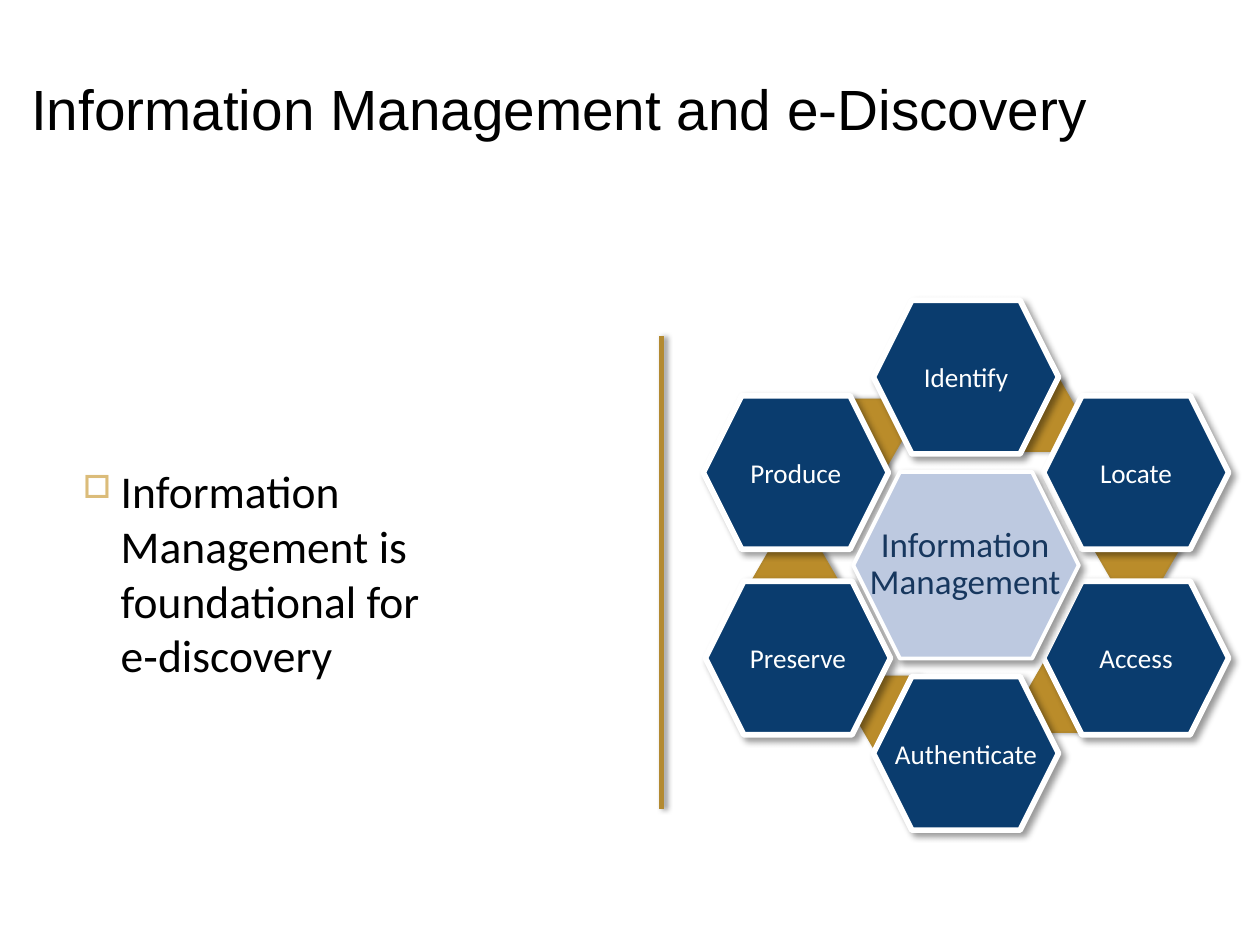
from dataclasses import dataclass

from lxml.etree import SubElement
from pptx import Presentation
from pptx.dml.color import RGBColor
from pptx.enum.shapes import MSO_CONNECTOR, MSO_SHAPE
from pptx.enum.text import MSO_ANCHOR as Anchor, PP_ALIGN as Align
from pptx.oxml.ns import qn
from pptx.util import Pt

COLORS = {
    "black": "000000", "white": "FFFFFF", "navy": "0A3C6E", "pale": "BDC9E0",
    "label": "17375E", "gold": "BA8C2A", "gold_edge": "B2882D",
    "divider": "B38A31", "bullet": "DBBC7A",
}


@dataclass(frozen=True)
class Shadow:
    blur: float
    distance: float
    angle: int


@dataclass(frozen=True)
class HexStyle:
    width: float
    height: float
    fill: str
    edge: str
    edge_width: float
    shadow: Shadow
    slant: float = 0.25


@dataclass(frozen=True)
class Step:
    label: str
    dx: float
    dy: float


SOFT = Shadow(3.1, 1.8, 0)
DEEP = Shadow(4, 3, 45)
LINK = HexStyle(49, 40.3, "gold", "gold_edge", 1, SOFT, 0.289)
STEP = HexStyle(105.8, 87.8, "navy", "white", 3.25, DEEP)
HUB = HexStyle(128.9, 106.6, "pale", "white", 2.25, DEEP)

# Ring of steps, as offsets from the hub centre
HUB_X, HUB_Y = 552, 323
SIDE_X, SIDE_Y, POLE_Y = 97.2, 53, 107.5
STEPS = [
    Step("Produce", -SIDE_X, -SIDE_Y),
    Step("Preserve", 1.2 - SIDE_X, SIDE_Y),
    Step("Locate", SIDE_X, -SIDE_Y),
    Step("Identify", 0, -POLE_Y),
    Step("Access", SIDE_X, SIDE_Y),
    Step("Authenticate", 0, POLE_Y),
]
# Centres of the gold links between neighbouring steps
LINKS = [(492.5, 248.4), (454.3, 331.9), (592.6, 237.6),
         (649.5, 313.2), (609.9, 398.2), (511.9, 406.8)]


def rgb(name: str) -> RGBColor:
    return RGBColor.from_string(COLORS[name])


def add_shadow(shape, shadow: Shadow) -> None:
    effects = SubElement(shape._element.spPr, qn("a:effectLst"))
    outer = SubElement(effects, qn("a:outerShdw"), {
        "blurRad": str(Pt(shadow.blur)), "dist": str(Pt(shadow.distance)),
        "dir": str(shadow.angle * 60000), "algn": "ctr", "rotWithShape": "0"})
    color = SubElement(outer, qn("a:srgbClr"), val=COLORS["black"])
    SubElement(color, qn("a:alpha"), val="40000")


def set_text(shape, text: str, size: float, color: str, font: str = "Calibri",
             frame_format: dict | None = None, paragraph_format: dict | None = None):
    frame = shape.text_frame
    for key, value in (frame_format or {}).items():
        setattr(frame, key, value)
    paragraph = frame.paragraphs[0]
    for key, value in (paragraph_format or {}).items():
        setattr(paragraph, key, value)
    run = paragraph.add_run()
    run.text = text
    for key, value in {"name": font, "size": Pt(size), "bold": False}.items():
        setattr(run.font, key, value)
    run.font.color.rgb = rgb(color)
    return paragraph


def add_hexagon(slide, x: float, y: float, style: HexStyle):
    hexagon = slide.shapes.add_shape(
        MSO_SHAPE.HEXAGON, Pt(x - style.width / 2), Pt(y - style.height / 2),
        Pt(style.width), Pt(style.height))
    hexagon.adjustments[0] = style.slant
    hexagon.fill.solid()
    hexagon.fill.fore_color.rgb = rgb(style.fill)
    hexagon.line.color.rgb = rgb(style.edge)
    hexagon.line.width = Pt(style.edge_width)
    add_shadow(hexagon, style.shadow)
    return hexagon


def margins(sides: float, ends: float) -> dict:
    return {"margin_left": Pt(sides), "margin_right": Pt(sides),
            "margin_top": Pt(ends), "margin_bottom": Pt(ends)}


def add_bullet(paragraph) -> None:
    properties = paragraph._p.get_or_add_pPr()
    properties.set("marL", str(Pt(21.6)))
    properties.set("indent", str(Pt(-21.6)))
    color = SubElement(properties, qn("a:buClr"))
    SubElement(color, qn("a:srgbClr"), val=COLORS["bullet"])
    SubElement(properties, qn("a:buSzPct"), val="70000")
    SubElement(properties, qn("a:buChar"), char="□")


def main() -> None:
    deck = Presentation()
    deck.slide_width, deck.slide_height = Pt(720), Pt(540)
    slide = deck.slides.add_slide(deck.slide_layouts[5])

    # Title
    title = slide.shapes.title
    for key, value in {"left": 12, "top": 16.6, "width": 648, "height": 67.7}.items():
        setattr(title, key, Pt(value))
    set_text(title, "Information Management and e-Discovery", 32.4, "black", "Arial",
             {"vertical_anchor": Anchor.BOTTOM, "word_wrap": True, **margins(5.8, 2.9)},
             {"alignment": Align.LEFT, "line_spacing": 0.9})

    # Ring of links and steps
    for x, y in LINKS:
        add_hexagon(slide, x, y, LINK)
    for step in STEPS:
        hexagon = add_hexagon(slide, HUB_X + step.dx, HUB_Y + step.dy, STEP)
        set_text(hexagon, step.label, 15.5, "white",
                 frame_format={"vertical_anchor": Anchor.MIDDLE, "word_wrap": False,
                               **margins(0, 0)},
                 paragraph_format={"alignment": Align.CENTER})

    # Hub
    add_hexagon(slide, HUB_X, HUB_Y, HUB)
    hub_label = slide.shapes.add_textbox(Pt(489.6), Pt(301), Pt(123.8), Pt(43.9))
    set_text(hub_label, "Information Management", 20, "label",
             frame_format={"word_wrap": True, **margins(0, 0)},
             paragraph_format={"alignment": Align.CENTER, "line_spacing": 0.9})

    # Divider
    divider = slide.shapes.add_connector(
        MSO_CONNECTOR.STRAIGHT, Pt(378), Pt(192.2), Pt(378), Pt(462.2))
    divider.line.color.rgb = rgb("divider")
    divider.line.width = Pt(3.25)
    add_shadow(divider, SOFT)

    # Statement
    statement = slide.shapes.add_textbox(Pt(40.3), Pt(226), Pt(306), Pt(202.3))
    add_bullet(set_text(
        statement, "Information Management is foundational for e‑discovery", 26, "black",
        frame_format={"vertical_anchor": Anchor.MIDDLE, "word_wrap": True},
        paragraph_format={"space_before": Pt(5.5)}))

    deck.save("out.pptx")


if __name__ == "__main__":
    main()
